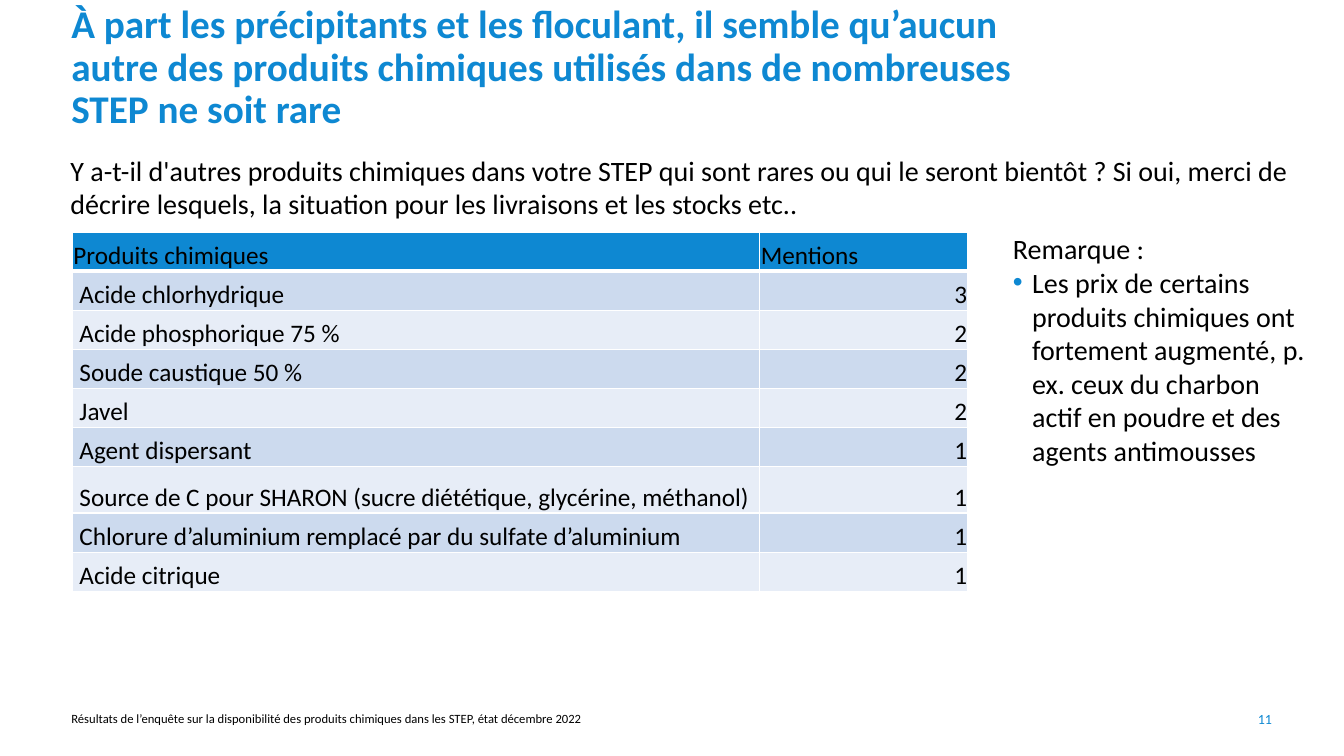
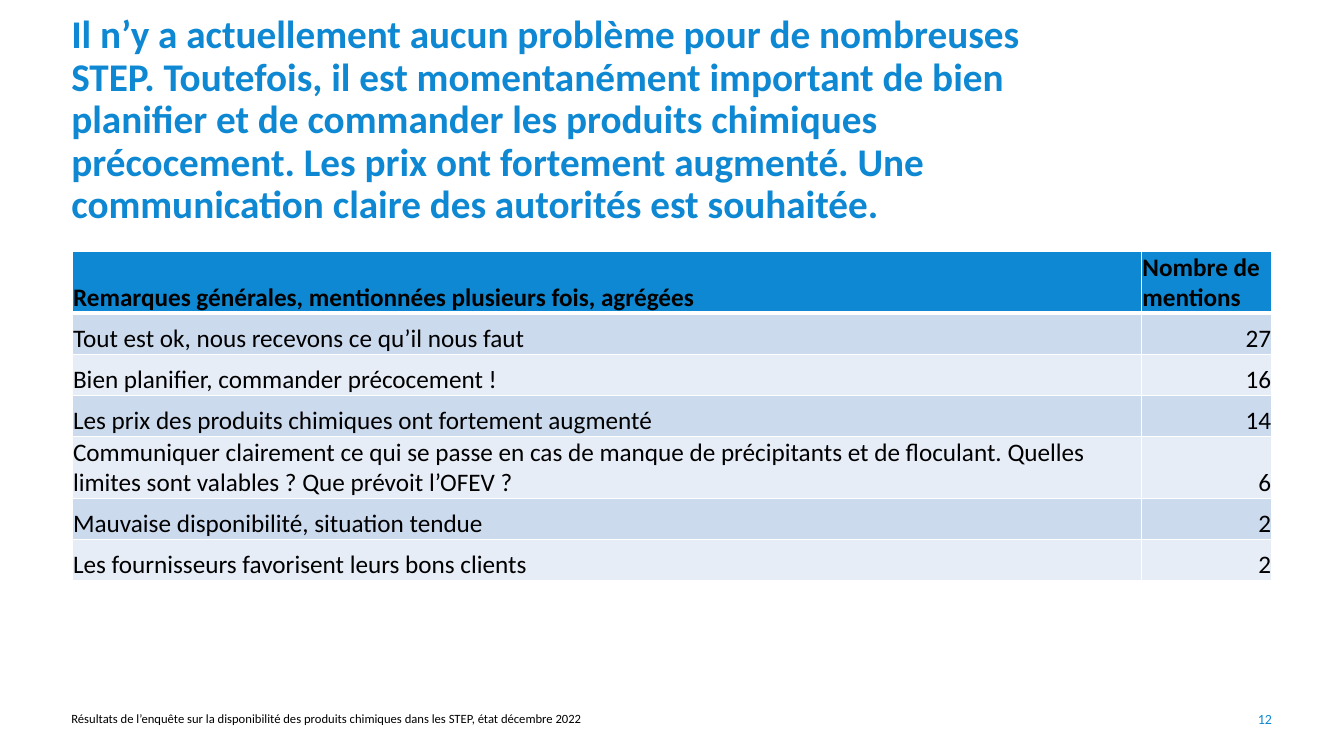
import pptx
import pptx.dml.color
import pptx.enum.text
import pptx.oxml
import pptx.oxml.ns
import pptx.util

Pt = pptx.util.Pt
ALIGN = pptx.enum.text.PP_ALIGN
ANCHOR = pptx.enum.text.MSO_ANCHOR
COLORS = {
    "blue": "0E88D2",
    "black": "000000",
    "white": "FFFFFF",
    "band_dark": "CCDAEE",
    "band_light": "E7EDF7",
}
FONT = "Calibri"
LEFT = 51
RIGHT = 908.6
FOOTER = "Résultats de l’enquête sur la disponibilité des produits chimiques dans les STEP, état décembre 2022"


def rgb(name):
    return pptx.dml.color.RGBColor.from_string(COLORS[name])


def sub_element(parent, tag, attrs="", child=""):
    ns = pptx.oxml.ns.nsdecls("a")
    parent.append(pptx.oxml.parse_xml(f"<a:{tag} {ns} {attrs}>{child}</a:{tag}>"))


def color_xml(name):
    return f'<a:srgbClr val="{COLORS[name]}"/>'


def put_text(tf, text, size=20, color="black", bold=False, align=ALIGN.LEFT,
             spacing=None, bullet=None, indent=13.7):
    p = tf.paragraphs[0]
    if p.runs:
        p = tf.add_paragraph()
    p.alignment = align
    if spacing:
        p.line_spacing = spacing
    if bullet:
        pPr = p._p.get_or_add_pPr()
        pPr.set("marL", str(int(Pt(indent))))
        pPr.set("indent", str(-int(Pt(indent))))
        sub_element(pPr, "buClr", child=color_xml("blue"))
        sub_element(pPr, "buFont", 'typeface="Arial"')
        sub_element(pPr, "buChar", f'char="{bullet}"')
    r = p.add_run()
    r.text = text
    r.font.name = FONT
    r.font.size = Pt(size)
    r.font.bold = bold
    r.font.color.rgb = rgb(color)


class Deck:
    """Holds the shared style and the current slide, with one method per kind of element."""

    def __init__(self):
        self.prs = pptx.Presentation()
        self.prs.slide_width = Pt(960)
        self.prs.slide_height = Pt(540)
        self.s = None

    def slide(self, title, title_top, title_height, number):
        self.s = self.prs.slides.add_slide(self.prs.slide_layouts[6])
        tf = self.box(LEFT, title_top, 700.6, title_height, anchor=ANCHOR.BOTTOM)
        put_text(tf, title, size=28, color="blue", bold=True, spacing=0.9)
        put_text(self.box(LEFT, 507.6, 620, 11.5), FOOTER, size=9)
        tf = self.box(RIGHT - 59, 507.6, 59, 11.5)
        put_text(tf, str(number), size=10, color="blue", align=ALIGN.RIGHT)

    def box(self, x, y, w, h, margins=(0, 0), anchor=ANCHOR.TOP):
        tf = self.s.shapes.add_textbox(Pt(x), Pt(y), Pt(w), Pt(h)).text_frame
        tf.word_wrap = True
        tf.vertical_anchor = anchor
        tf.margin_left = tf.margin_right = Pt(margins[0])
        tf.margin_top = tf.margin_bottom = Pt(margins[1])
        return tf

    def table(self, x, y, widths, heights, rows, header_bold=False, label_margin=0.7):
        frame = self.s.shapes.add_table(len(rows), len(widths), Pt(x), Pt(y),
                                        Pt(sum(widths)), Pt(sum(heights)))
        table = frame.table
        table.horz_banding = False
        for column, width in zip(table.columns, widths):
            column.width = Pt(width)
        for i, (row, height) in enumerate(zip(rows, heights)):
            table.rows[i].height = Pt(height)
            for j, value in enumerate(row):
                margin = label_margin if i and not j else 0.7
                self.cell(table.cell(i, j), str(value), i, margin,
                          bold=header_bold and i == 0,
                          align=ALIGN.RIGHT if i and j else ALIGN.LEFT)

    def cell(self, cell, text, row, margin, bold, align):
        cell.vertical_anchor = ANCHOR.BOTTOM
        cell.margin_left = cell.margin_right = Pt(margin)
        cell.margin_top = Pt(0.7)
        cell.margin_bottom = Pt(0)
        widths = {"L": 1, "R": 1, "T": 3 if row == 1 else 1, "B": 3 if row == 0 else 1}
        tcPr = cell._tc.get_or_add_tcPr()
        for side, width in widths.items():
            sub_element(tcPr, f"ln{side}", f'w="{int(Pt(width))}"',
                        f"<a:solidFill>{color_xml('white')}</a:solidFill>")
        cell.fill.solid()
        band = "band_dark" if row % 2 else "band_light"
        cell.fill.fore_color.rgb = rgb(band if row else "blue")
        put_text(cell.text_frame, text, size=18, bold=bold, align=align)


def main():
    deck = Deck()

    deck.slide("À part les précipitants et les floculant, il semble qu’aucun autre des produits "
               "chimiques utilisés dans de nombreuses STEP ne soit rare", 29.5, 64.8, 11)
    put_text(deck.box(43.2, 105.8, 884.2, 55.4, margins=(7.2, 3.6)),
             "Y a-t-il d'autres produits chimiques dans votre STEP qui sont rares ou qui le seront "
             "bientôt ? Si oui, merci de décrire lesquels, la situation pour les livraisons et les "
             "stocks etc..")
    chemicals = [
        ("Produits chimiques", "Mentions"),
        ("Acide chlorhydrique", 3),
        ("Acide phosphorique 75 %", 2),
        ("Soude caustique 50 %", 2),
        ("Javel", 2),
        ("Agent dispersant", 1),
        ("Source de C pour SHARON (sucre diététique, glycérine, méthanol)", 1),
        ("Chlorure d’aluminium remplacé par du sulfate d’aluminium", 1),
        ("Acide citrique", 1),
    ]
    heights = [27.9] * len(chemicals)
    heights[6] = 33.2
    deck.table(51.8, 165.9, (491, 148.7), heights, chemicals, label_margin=5)
    note = deck.box(723.6, 165.6, 213.1, 87)
    put_text(note, "Remarque :")
    put_text(note, "Les prix de certains produits chimiques ont fortement augmenté, p. ex. ceux du "
                   "charbon actif en poudre et des agents antimousses", bullet="•")

    deck.slide("Il n’y a actuellement aucun problème pour de nombreuses STEP. Toutefois, il est "
               "momentanément important de bien planifier et de commander les produits chimiques "
               "précocement. Les prix ont fortement augmenté. Une communication claire des "
               "autorités est souhaitée.", 83.5, 78.5, 12)
    remarks = [
        ("Remarques générales, mentionnées plusieurs fois, agrégées", "Nombre de mentions"),
        ("Tout est ok, nous recevons ce qu’il nous faut", 27),
        ("Bien planifier, commander précocement !", 16),
        ("Les prix des produits chimiques ont fortement augmenté", 14),
        ("Communiquer clairement ce qui se passe en cas de manque de précipitants et de "
         "floculant. Quelles limites sont valables ? Que prévoit l’OFEV ?", 6),
        ("Mauvaise disponibilité, situation tendue", 2),
        ("Les fournisseurs favorisent leurs bons clients", 2),
    ]
    heights = [29.3] * len(remarks)
    heights[0] = heights[4] = 44.3
    deck.table(51.5, 179.5, (763.9, 93.2), heights, remarks, header_bold=True)

    deck.prs.save("out.pptx")


if __name__ == "__main__":
    main()
